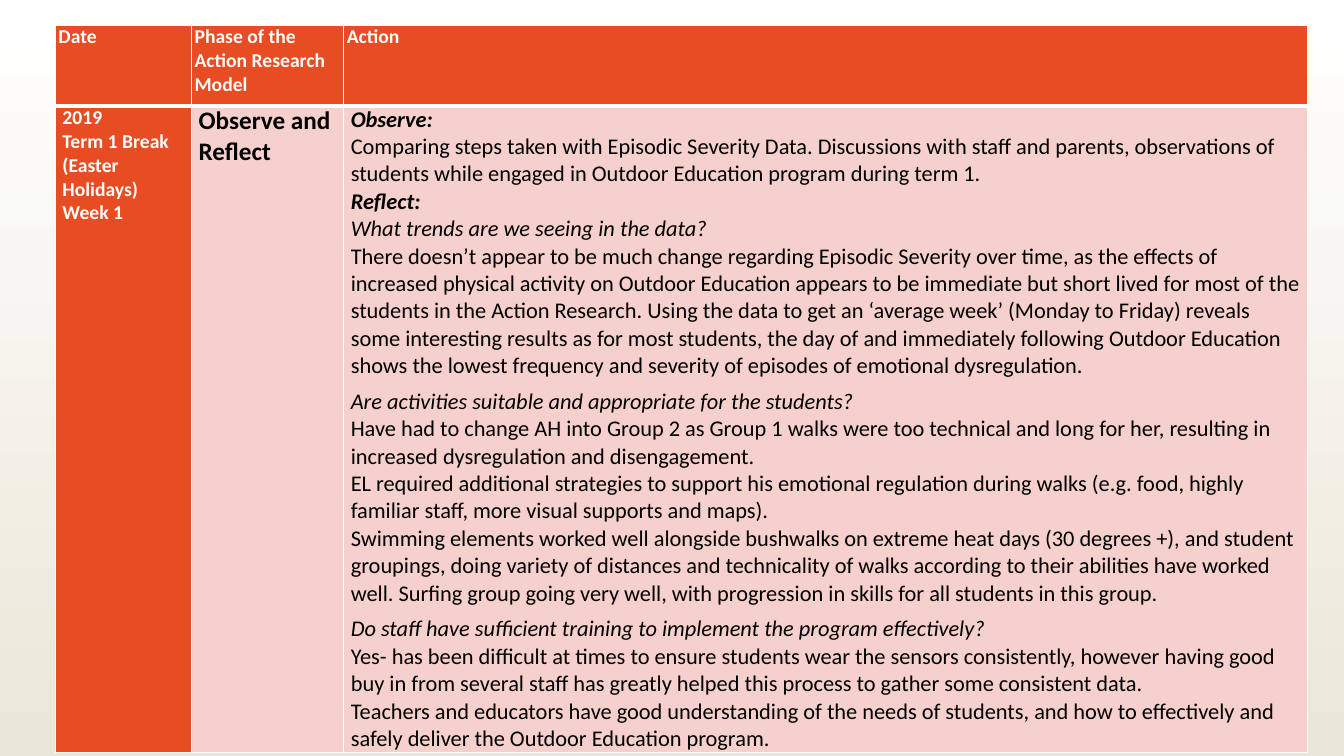
from lxml import etree
from pptx import Presentation
from pptx import util as u
from pptx.dml.color import RGBColor
from pptx.oxml import ns

# Content: each paragraph is (style, text)
HEADINGS = ["Date", "Phase of the Action Research Model", "Action"]
DATE = [
    ("label", "2019"),
    ("label", "Term 1 Break (Easter Holidays)"),
    ("label", "Week 1"),
]
PHASE = [("phase", "Observe and Reflect")]
ACTION = [
    ("stage", "Observe:"),
    ("body", "Comparing steps taken with Episodic Severity Data. Discussions with staff and parents, "
             "observations of students while engaged in Outdoor Education program during term 1."),
    ("stage", "Reflect:"),
    ("question", "What trends are we seeing in the data?"),
    ("closing", "There doesn’t appear to be much change regarding Episodic Severity over time, as the "
                "effects of increased physical activity on Outdoor Education appears to be immediate but "
                "short lived for most of the students in the Action Research. Using the data to get an "
                "‘average week’ (Monday to Friday) reveals some interesting results as for most students, "
                "the day of and immediately following Outdoor Education shows the lowest frequency and "
                "severity of episodes of emotional dysregulation."),
    ("question", "Are activities suitable and appropriate for the students?"),
    ("body", "Have had to change AH into Group 2 as Group 1 walks were too technical and long for her, "
             "resulting in increased dysregulation and disengagement."),
    ("body", "EL required additional strategies to support his emotional regulation during walks "
             "(e.g. food, highly familiar staff, more visual supports and maps)."),
    ("closing", "Swimming elements worked well alongside bushwalks on extreme heat days (30 degrees +), "
                "and student groupings, doing variety of distances and technicality of walks according to "
                "their abilities have worked well. Surfing group going very well, with progression in "
                "skills for all students in this group."),
    ("question", "Do staff have sufficient training to implement the program effectively?"),
    ("body", "Yes- has been difficult at times to ensure students wear the sensors consistently, however "
             "having good buy in from several staff has greatly helped this process to gather some "
             "consistent data."),
    ("body", "Teachers and educators have good understanding of the needs of students, and how to "
             "effectively and safely deliver the Outdoor Education program."),
]
ROWS = [[[("label", heading)] for heading in HEADINGS], [DATE, PHASE, ACTION]]

# Look
COLORS = {"white": "FFFFFF", "sand": "EAE7D8", "orange": "E84C22", "pink": "F6D0CD", "black": "000000"}
STYLES = {
    "label": ("white", 0, {"size": u.Pt(14), "bold": True, "italic": False}),
    "phase": ("black", 0, {"size": u.Pt(18), "bold": True, "italic": False}),
    "stage": ("black", 0, {"size": u.Pt(16), "bold": True, "italic": True}),
    "question": ("black", 0, {"size": u.Pt(16), "bold": False, "italic": True}),
    "body": ("black", 0, {"size": u.Pt(16), "bold": False, "italic": False}),
    "closing": ("black", 6, {"size": u.Pt(16), "bold": False, "italic": False}),
}

# Grid, in inches
LEFT, TOP = 0.55, 0.25
COLUMN_WIDTHS = [1.35, 1.51, 9.56]
ROW_HEIGHTS = [0.8, 5.01]


def rgb(name):
    return RGBColor.from_string(COLORS[name])


def add_borders(cell, widths):
    properties = cell._tc.get_or_add_tcPr()
    for side, points in widths.items():
        line = etree.SubElement(properties, ns.qn(f"a:ln{side}"), w=str(u.Pt(points)))
        fill = etree.SubElement(line, ns.qn("a:solidFill"))
        etree.SubElement(fill, ns.qn("a:srgbClr"), val=COLORS["white"])


def write_paragraphs(frame, content):
    for index, (style, words) in enumerate(content):
        color, space_after, font_values = STYLES[style]
        paragraph = frame.add_paragraph() if index else frame.paragraphs[0]
        paragraph.space_after = u.Pt(space_after)
        run = paragraph.add_run()
        run.text = words
        run.font.name = "Calibri"
        run.font.color.rgb = rgb(color)
        for name, value in font_values.items():
            setattr(run.font, name, value)


def main():
    presentation = Presentation()
    presentation.slide_width, presentation.slide_height = u.Inches(13.33), u.Inches(7.5)
    slide = presentation.slides.add_slide(presentation.slide_layouts[6])

    # Background fades downwards
    background = slide.background.fill
    background.gradient()
    background.gradient_angle = 270
    for stop, position, color in zip(background.gradient_stops, (0, 1), ("white", "sand")):
        stop.position = position
        stop.color.rgb = rgb(color)

    # Table grid
    table = slide.shapes.add_table(
        len(ROW_HEIGHTS), len(COLUMN_WIDTHS), u.Inches(LEFT), u.Inches(TOP),
        u.Inches(sum(COLUMN_WIDTHS)), u.Inches(sum(ROW_HEIGHTS))).table
    for column, width in zip(table.columns, COLUMN_WIDTHS):
        column.width = u.Inches(width)
    for row, height in zip(table.rows, ROW_HEIGHTS):
        row.height = u.Inches(height)

    # Cells
    for r, row in enumerate(ROWS):
        for c, content in enumerate(row):
            cell = table.cell(r, c)
            cell.margin_left = cell.margin_right = u.Inches(0.07 if r else 0.03)
            cell.margin_top = cell.margin_bottom = 0
            add_borders(cell, {"L": 1, "R": 1, "T": 3 if r else 1, "B": 1 if r else 3})
            cell.fill.solid()
            cell.fill.fore_color.rgb = rgb("pink" if r and c else "orange")
            write_paragraphs(cell.text_frame, content)

    presentation.save("out.pptx")


if __name__ == "__main__":
    main()
